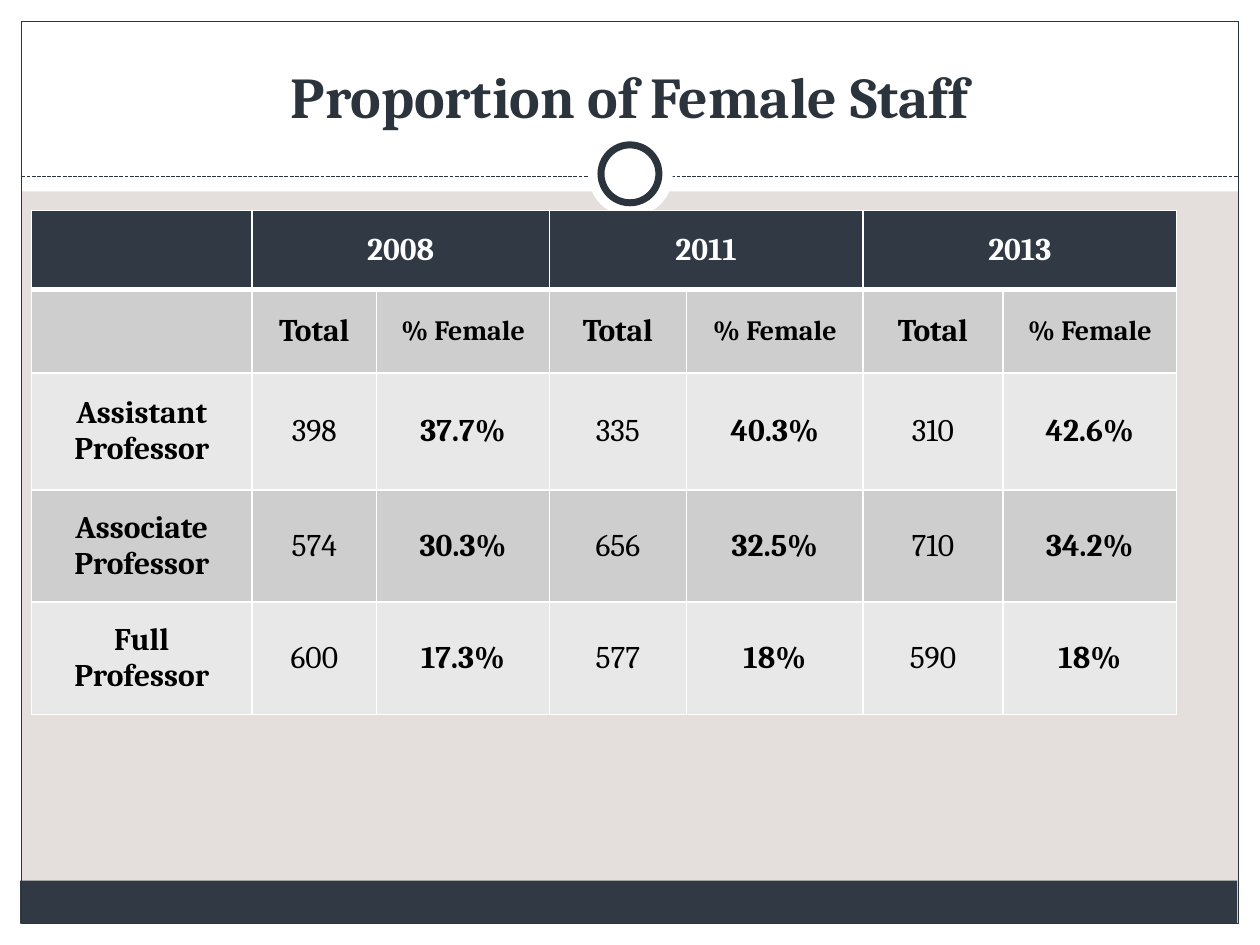
from typing import NamedTuple, Optional

from lxml.etree import SubElement
from pptx import Presentation
from pptx.dml.color import RGBColor
from pptx.enum.dml import MSO_LINE
from pptx.enum.shapes import MSO_CONNECTOR, MSO_SHAPE as Kind
from pptx.enum.text import MSO_ANCHOR as Anchor, PP_ALIGN as Align
from pptx.oxml.ns import qn
from pptx.util import Inches, Pt

FONT = "Cambria"
WHITE = RGBColor(0xFF, 0xFF, 0xFF)
BLACK = RGBColor(0, 0, 0)
BACK = RGBColor(0xE4, 0xDF, 0xDC)
SLATE = RGBColor(0x31, 0x3A, 0x44)
INK = RGBColor(0x2B, 0x33, 0x3C)
DARK = RGBColor(0xCE, 0xCE, 0xCF)
LIGHT = RGBColor(0xE8, 0xE8, 0xE9)

YEARS = ["2008", "2011", "2013"]
ROWS = [
    ["", *["Total", "% Female"] * len(YEARS)],
    ["Assistant\nProfessor", "398", "37.7%", "335", "40.3%", "310", "42.6%"],
    ["Associate Professor", "574", "30.3%", "656", "32.5%", "710", "34.2%"],
    ["Full Professor", "600", "17.3%", "577", "18%", "590", "18%"],
]
WIDTHS = [1.75, 0.99, 1.37, 1.09, 1.4, 1.11, 1.38]
HEIGHTS = [0.63, 0.66, 0.93, 0.89, 0.89]


class Panel(NamedTuple):
    kind: Kind
    left: float
    top: float
    width: float
    height: float
    fill: Optional[RGBColor] = WHITE
    weight: float = 0


PANELS = [
    Panel(Kind.RECTANGLE, 0, 7.33, 10, 0.17),
    Panel(Kind.RECTANGLE, 0, 0, 10, 1.52),
    Panel(Kind.RECTANGLE, 0, 0, 0.17, 7.5),
    Panel(Kind.RECTANGLE, 9.83, 0, 0.17, 7.5),
    Panel(Kind.RECTANGLE, 0.16, 6.99, 9.66, 0.34, SLATE),
    Panel(Kind.RECTANGLE, 0.17, 0.17, 9.66, 7.16, None, 0.75),
]
RINGS = [
    Panel(Kind.OVAL, 4.67, 1.05, 0.67, 0.67),
    Panel(Kind.OVAL, 4.77, 1.15, 0.46, 0.46, WHITE, 4),
]


def draw_panel(slide, panel: Panel) -> None:
    box = map(Inches, panel[1:5])
    shape = slide.shapes.add_shape(panel.kind, *box)
    shape.shadow.inherit = False
    if panel.fill is None:
        shape.fill.background()
    else:
        shape.fill.solid()
        shape.fill.fore_color.rgb = panel.fill
    if panel.weight:
        shape.line.color.rgb = INK
        shape.line.width = Pt(panel.weight)
    else:
        shape.line.fill.background()


def draw_rule(slide) -> None:
    ends = map(Inches, (0.17, 1.4, 9.83, 1.4))
    rule = slide.shapes.add_connector(MSO_CONNECTOR.STRAIGHT, *ends)
    rule.line.color.rgb = INK
    rule.line.width = Pt(0.75)
    rule.line.dash_style = MSO_LINE.SQUARE_DOT
    SubElement(rule._element.spPr, qn("a:effectLst"))


def style_text(frame, size: float, color: RGBColor, bold: bool) -> None:
    look = {"name": FONT, "size": Pt(size), "bold": bold}
    for para in frame.paragraphs:
        para.alignment = Align.CENTER
        for run in para.runs:
            for key, value in look.items():
                setattr(run.font, key, value)
            run.font.color.rgb = color


def draw_title(slide) -> None:
    title = slide.shapes.title
    place = {"left": 0.33, "top": 0.25, "width": 9.33, "height": 0.83}
    for key, value in place.items():
        setattr(title, key, Inches(value))
    frame = title.text_frame
    frame.text = "Proportion of Female Staff"
    frame.vertical_anchor = Anchor.BOTTOM
    style_text(frame, 33, INK, True)
    slide.shapes._spTree.append(title._element)  # bring to front


def set_edges(cell, top: float, base: float) -> None:
    """Give the cell white borders; must precede its fill."""
    props = cell._tc.get_or_add_tcPr()
    for side, weight in {"L": 1, "R": 1, "T": top, "B": base}.items():
        edge = SubElement(props, qn(f"a:ln{side}"), w=str(Pt(weight)))
        fill = SubElement(edge, qn("a:solidFill"))
        SubElement(fill, qn("a:srgbClr"), val=str(WHITE))


def fill_cell(cell, text: str, row: int, col: int) -> None:
    head = row == 0
    set_edges(cell, 3 if row == 1 else 1, 3 if head else 1)
    cell.fill.solid()
    cell.fill.fore_color.rgb = SLATE if head else (LIGHT, DARK)[row % 2]
    cell.vertical_anchor = Anchor.MIDDLE
    cell.text = text
    size = 16 if text == "% Female" else 18
    bold = row < 2 or col % 2 == 0
    style_text(cell.text_frame, size, WHITE if head else BLACK, bold)


def draw_table(slide) -> None:
    box = map(Inches, (0.25, 1.67, sum(WIDTHS), sum(HEIGHTS)))
    table = slide.shapes.add_table(len(HEIGHTS), len(WIDTHS), *box).table
    for col, width in zip(table.columns, WIDTHS):
        col.width = Inches(width)
    for row, height in zip(table.rows, HEIGHTS):
        row.height = Inches(height)
    head = [""]
    for i, year in enumerate(YEARS):
        head += [year, ""]
        table.cell(0, 2 * i + 1).merge(table.cell(0, 2 * i + 2))
    for r, row in enumerate([head, *ROWS]):
        for c, text in enumerate(row):
            fill_cell(table.cell(r, c), text, r, c)


def main() -> None:
    deck = Presentation()
    deck.slide_width, deck.slide_height = Inches(10), Inches(7.5)
    slide = deck.slides.add_slide(deck.slide_layouts[5])
    slide.background.fill.solid()
    slide.background.fill.fore_color.rgb = BACK
    for panel in PANELS:
        draw_panel(slide, panel)
    draw_rule(slide)
    for ring in RINGS:
        draw_panel(slide, ring)
    draw_title(slide)
    draw_table(slide)
    deck.save("out.pptx")


if __name__ == "__main__":
    main()
